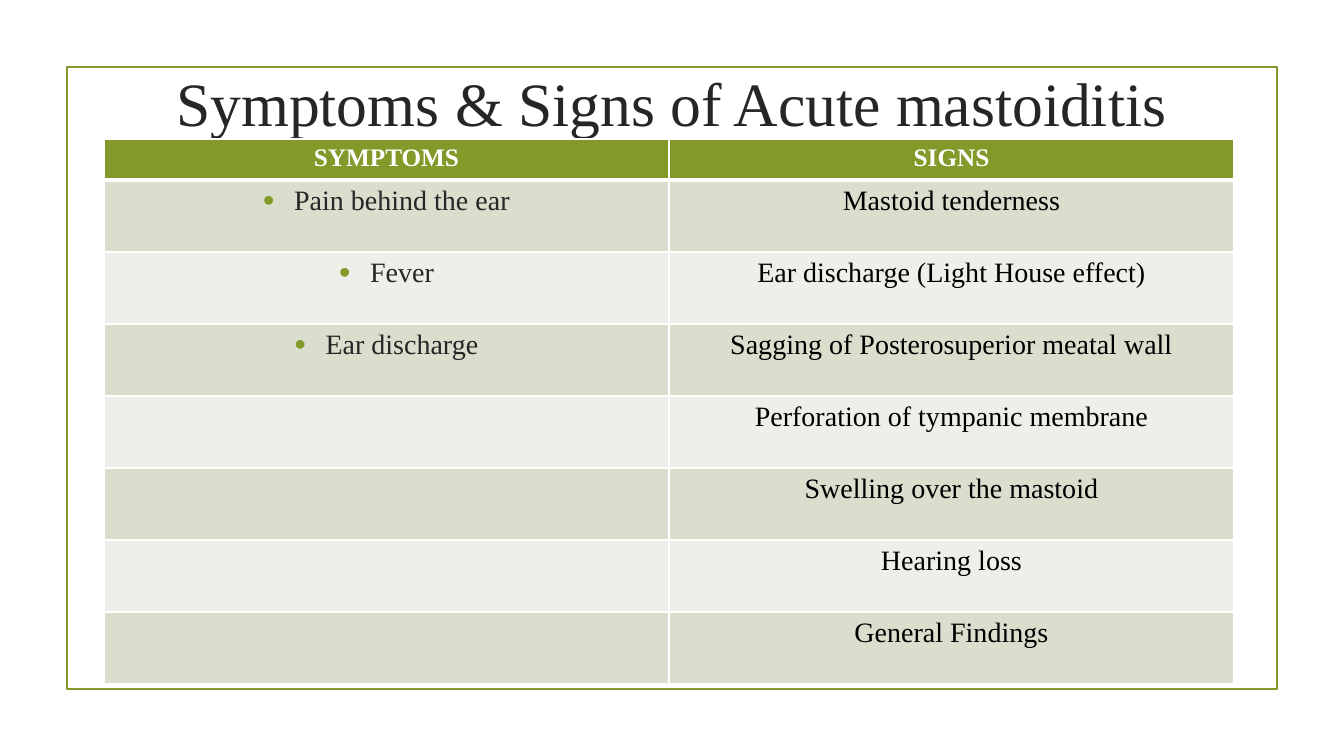
import pptx
import pptx.dml.color
import pptx.enum.shapes
import pptx.enum.text
import pptx.oxml
import pptx.oxml.ns
import pptx.util

PX = 914400 / 100.8
FONT = "Times New Roman"
COLORS = {
    "olive": "83992A",
    "white": "FFFFFF",
    "charcoal": "262626",
    "black": "000000",
    "band_dark": "D9DECD",
    "band_light": "EDEFE8",
}
HEADERS = ["SYMPTOMS", "SIGNS"]
SYMPTOMS = ["Pain behind the ear", "Fever", "Ear discharge"]
SIGNS = [
    "Mastoid tenderness",
    "Ear discharge (Light House effect)",
    "Sagging of Posterosuperior meatal wall",
    "Perforation of tympanic membrane",
    "Swelling over the mastoid",
    "Hearing loss",
    "General Findings",
]


def px(length):
    """Convert pixels to EMU."""
    return pptx.util.Emu(round(length * PX))


def rgb(name):
    """Look up a named colour."""
    return pptx.dml.color.RGBColor.from_string(COLORS[name])


def drawing_xml(body):
    """Parse an element in the drawing namespace."""
    namespace = pptx.oxml.ns.nsdecls("a")
    tag, rest = body[:body.index(" ")], body[body.index(" "):]
    return pptx.oxml.parse_xml(f"{tag} {namespace}{rest}")


def add_bullet(paragraph):
    """Give a paragraph an olive bullet with a hanging indent."""
    properties = paragraph._p.get_or_add_pPr()
    properties.set("marL", str(px(31)))
    properties.set("indent", str(-px(31)))
    for body in (
        f'<a:buClr ><a:srgbClr val="{COLORS["olive"]}"/></a:buClr>',
        '<a:buSzPct val="115000"/>',
        '<a:buFont typeface="Arial"/>',
        '<a:buChar char="•"/>',
    ):
        properties.append(drawing_xml(body))


def write_text(frame, text, size=20, color="black", bold=False, bullet=False):
    """Write one centred paragraph in a text frame."""
    paragraph = frame.paragraphs[0]
    paragraph.alignment = pptx.enum.text.PP_ALIGN.CENTER
    if bullet:
        paragraph.space_after = pptx.util.Pt(6)
        add_bullet(paragraph)
    run = paragraph.add_run()
    run.text = text
    run.font.name = FONT
    run.font.size = pptx.util.Pt(size)
    run.font.bold = bold
    run.font.color.rgb = rgb(color)


def style_cell(cell, fill, bottom=1, top=1):
    """Fill a cell and draw its white borders, with widths in points."""
    properties = cell._tc.get_or_add_tcPr()
    for side, width in (("L", 1), ("R", 1), ("T", top), ("B", bottom)):
        properties.append(drawing_xml(
            f'<a:ln{side} w="{pptx.util.Pt(width)}"><a:solidFill>'
            f'<a:srgbClr val="{COLORS["white"]}"/></a:solidFill></a:ln{side}>'))
    cell.fill.solid()
    cell.fill.fore_color.rgb = rgb(fill)


def add_frame(slide):
    """Draw the outlined frame around the content."""
    shape = slide.shapes.add_shape(
        pptx.enum.shapes.MSO_SHAPE.RECTANGLE, px(67), px(67), px(1210), px(622))
    shape.shadow.inherit = False
    shape.fill.background()
    shape.line.color.rgb = rgb("olive")
    shape.line.width = pptx.util.Pt(1.25)


def add_title(slide, text):
    """Place and format the title."""
    title = slide.shapes.title
    title.left, title.top, title.width, title.height = px(143), px(30), px(1058), px(144)
    title.text_frame.word_wrap = True
    title.text_frame.auto_size = pptx.enum.text.MSO_AUTO_SIZE.NONE
    title.text_frame.vertical_anchor = pptx.enum.text.MSO_ANCHOR.MIDDLE
    write_text(title.text_frame, text, size=44, color="charcoal")


def add_findings_table(slide):
    """Build the table of symptoms and signs."""
    table = slide.shapes.add_table(
        len(SIGNS) + 1, 2, px(104), px(139), px(1130), px(545)).table
    for column in table.columns:
        column.width = px(565)
    for index, row in enumerate(table.rows):
        row.height = px(72 if index else 41)
    for column, header in enumerate(HEADERS):
        cell = table.cell(0, column)
        style_cell(cell, "olive", bottom=3)
        write_text(cell.text_frame, header, size=18, color="white", bold=True)
    for row, sign in enumerate(SIGNS, start=1):
        for column in range(2):
            style_cell(table.cell(row, column), "band_dark" if row % 2 else "band_light",
                       top=3 if row == 1 else 1)
        write_text(table.cell(row, 1).text_frame, sign)
    for row, symptom in enumerate(SYMPTOMS, start=1):
        write_text(table.cell(row, 0).text_frame, symptom, color="charcoal", bullet=True)


def main():
    """Build and save the slide."""
    presentation = pptx.Presentation()
    presentation.slide_width, presentation.slide_height = px(1344), px(756)
    slide = presentation.slides.add_slide(presentation.slide_layouts[5])
    add_frame(slide)
    add_title(slide, "Symptoms & Signs of Acute mastoiditis")
    add_findings_table(slide)
    presentation.save("out.pptx")


if __name__ == "__main__":
    main()
